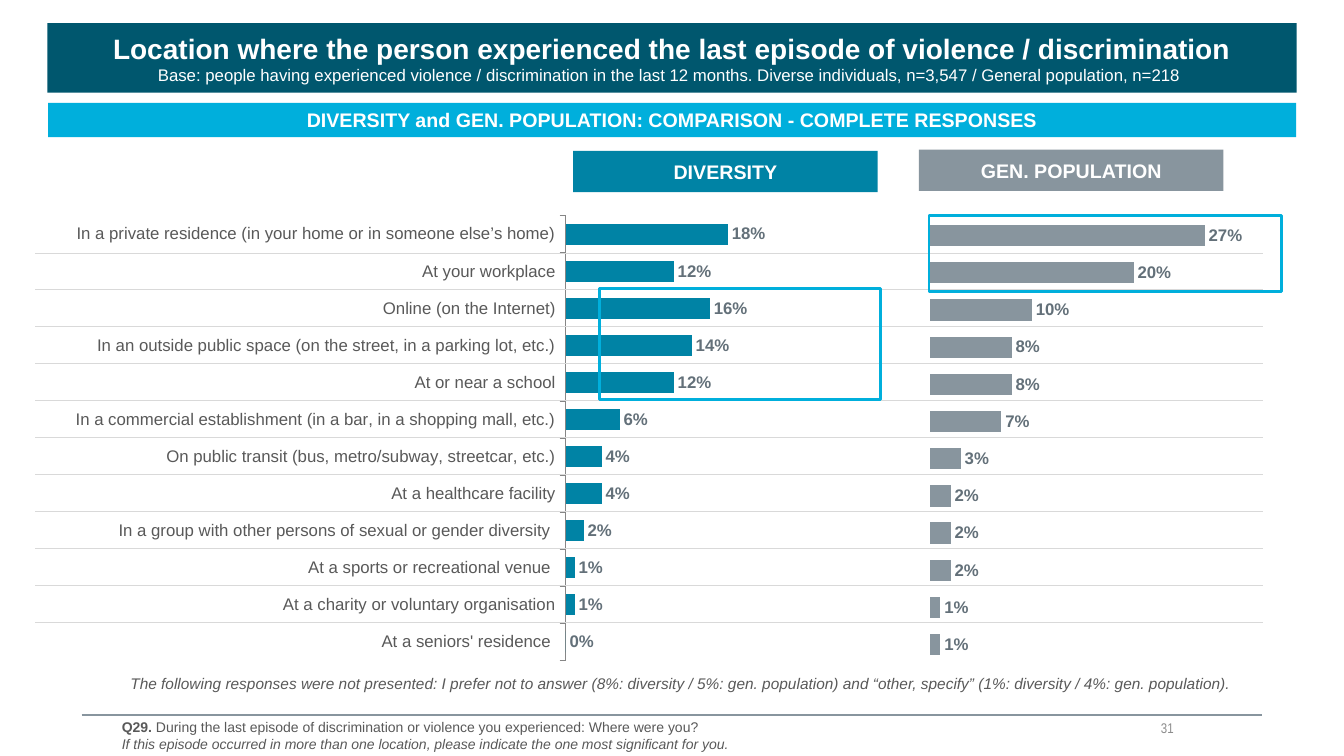
from lxml import etree
from pptx import Presentation
from pptx.chart.data import CategoryChartData
from pptx.dml.color import RGBColor
from pptx.enum.chart import XL_CHART_TYPE, XL_LABEL_POSITION, XL_TICK_LABEL_POSITION, XL_TICK_MARK
from pptx.enum.shapes import MSO_CONNECTOR, MSO_SHAPE
from pptx.enum.text import MSO_ANCHOR, PP_ALIGN
from pptx.oxml import parse_xml
from pptx.oxml.ns import nsdecls, qn
from pptx.util import Inches, Pt

NAVY, TEAL, CYAN, GREY = "00576E", "0083A5", "00AFDC", "88959E"
WHITE, BODY, VALUE, RULE, MUTED = "FFFFFF", "595959", "637079", "D9D9D9", "8C8C8C"

LOCATIONS = [
    ("In a private residence (in your home or in someone else’s home)", 0.18, 0.27),
    ("At your workplace", 0.12, 0.20),
    ("Online (on the Internet)", 0.16, 0.10),
    ("In an outside public space (on the street, in a parking lot, etc.)", 0.14, 0.08),
    ("At or near a school", 0.12, 0.08),
    ("In a commercial establishment (in a bar, in a shopping mall, etc.)", 0.06, 0.07),
    ("On public transit (bus, metro/subway, streetcar, etc.)", 0.04, 0.03),
    ("At a healthcare facility", 0.04, 0.02),
    ("In a group with other persons of sexual or gender diversity ", 0.02, 0.02),
    ("At a sports or recreational venue ", 0.01, 0.02),
    ("At a charity or voluntary organisation", 0.01, 0.01),
    ("At a seniors' residence ", 0, 0.01),
]


def rgb(code):
    return RGBColor.from_string(code)


def style_font(font, size, color, bold=False, italic=False, face="Arial"):
    font.name, font.size, font.bold, font.italic = face, Pt(size), bold, italic
    font.color.rgb = rgb(color)


def write(paragraph, text, align=PP_ALIGN.LEFT, **style):
    paragraph.alignment = align
    run = paragraph.add_run()
    run.text = text
    style_font(run.font, **style)


class SurveySlide:
    """Holds the slide; places are in percent of its width and height."""

    def __init__(self, presentation):
        self.width = presentation.slide_width
        self.height = presentation.slide_height
        self.shapes = presentation.slides.add_slide(presentation.slide_layouts[6]).shapes

    def place(self, left, top, width, height):
        return (round(left * self.width / 100), round(top * self.height / 100),
                round(width * self.width / 100), round(height * self.height / 100))

    def frame(self, shape, anchor, inset):
        frame = shape.text_frame
        frame.word_wrap = True
        frame.vertical_anchor = anchor
        if not inset:
            frame.margin_left = frame.margin_right = frame.margin_top = frame.margin_bottom = 0
        return frame

    def box(self, area, fill=None, outline=None):
        shape = self.shapes.add_shape(MSO_SHAPE.RECTANGLE, *self.place(*area))
        shape.shadow.inherit = False
        if fill:
            shape.fill.solid()
            shape.fill.fore_color.rgb = rgb(fill)
        else:
            shape.fill.background()
        if outline:
            shape.line.color.rgb = rgb(outline)
            shape.line.width = Pt(2)
        else:
            shape.line.fill.background()
        return shape

    def banner(self, area, fill, text, size=14):
        frame = self.frame(self.box(area, fill), MSO_ANCHOR.MIDDLE, inset=False)
        write(frame.paragraphs[0], text, PP_ALIGN.CENTER, size=size, color=WHITE, bold=True)
        return frame

    def text(self, area, anchor=MSO_ANCHOR.TOP, inset=True):
        return self.frame(self.shapes.add_textbox(*self.place(*area)), anchor, inset)

    def rule(self, left, right, y, color, weight):
        x1, y1, x2, _ = self.place(left, y, right, 0)
        line = self.shapes.add_connector(MSO_CONNECTOR.STRAIGHT, x1, y1, x2, y1)
        line.line.color.rgb = rgb(color)
        line.line.width = Pt(weight)
        etree.SubElement(line._element.spPr, qn("a:effectLst"))

    def bars(self, area, plot_area, values, color, show_locations):
        data = CategoryChartData(number_format="0%")
        data.categories = [location for location, *_ in LOCATIONS]
        data.add_series("Series 1", values)
        chart = self.shapes.add_chart(XL_CHART_TYPE.BAR_CLUSTERED, *self.place(*area), data).chart
        chart.has_legend = chart.has_title = False
        style_font(chart.font, 12, BODY)

        shares = chart.value_axis
        shares.minimum_scale, shares.maximum_scale = 0, 0.3
        shares.has_major_gridlines = shares.visible = False
        places = chart.category_axis
        places.reverse_order = True
        places.has_major_gridlines = False
        places.visible = show_locations
        if show_locations:
            places.major_tick_mark = XL_TICK_MARK.OUTSIDE
            places.tick_label_position = XL_TICK_LABEL_POSITION.LOW
            places.format.line.color.rgb = rgb("868686")
            style_font(places.tick_labels.font, 12, BODY)

        plot = chart.plots[0]
        plot.gap_width = 75
        plot.vary_by_categories = False
        fill = plot.series[0].format.fill
        fill.solid()
        fill.fore_color.rgb = rgb(color)
        plot.has_data_labels = True
        labels = plot.data_labels
        labels.show_value = True
        labels.number_format, labels.number_format_is_linked = "0%", False
        labels.position = XL_LABEL_POSITION.OUTSIDE_END
        style_font(labels.font, 12, VALUE, bold=True)
        self.fix_plot(chart, plot_area)

    def fix_plot(self, chart, plot_area):
        """Pin the inner plot area, in percent of the chart."""
        sizes = "".join(f'<c:{key} val="{share / 100}"/>' for key, share in zip("xywh", plot_area))
        layout = parse_xml(
            f'<c:layout {nsdecls("c")}><c:manualLayout><c:layoutTarget val="inner"/>'
            f'<c:xMode val="edge"/><c:yMode val="edge"/>{sizes}</c:manualLayout></c:layout>')
        plot_xml = chart._chartSpace.chart.plotArea
        for automatic in plot_xml.findall(qn("c:layout")):
            plot_xml.remove(automatic)
        plot_xml.insert(0, layout)


def main():
    presentation = Presentation()
    presentation.slide_width, presentation.slide_height = Inches(13.33), Inches(7.5)
    slide = SurveySlide(presentation)
    _, diversity, general = zip(*LOCATIONS)

    slide.rule(6.08, 93.92, 94.53, GREY, 1.5)
    slide.bars((50.38, 28.4, 46.51, 61.2), (40.5, 0.5, 48.8, 96.5),
               general, GREY, show_locations=False)
    page = slide.text((65.49, 94.53, 21.83, 3.47), MSO_ANCHOR.MIDDLE, inset=False)
    write(page.paragraphs[0], "31", PP_ALIGN.RIGHT, size=10, color=MUTED, face="Arial Narrow")

    title = slide.banner(
        (3.53, 3.07, 92.95, 9.2), NAVY,
        "Location where the person experienced the last episode of violence / discrimination", 20)
    write(title.add_paragraph(),
          "Base: people having experienced violence / discrimination in the last 12 months. "
          "Diverse individuals, n=3,547 / General population, n=218 ",
          PP_ALIGN.CENTER, size=12, color=WHITE)
    slide.banner((42.65, 19.97, 22.66, 5.47), TEAL, "DIVERSITY")
    slide.banner((68.38, 19.8, 22.66, 5.47), GREY, "GEN. POPULATION")

    slide.bars((-15.15, 26.13, 81.77, 63.47), (70, 3.8, 24.6, 92.7),
               diversity, TEAL, show_locations=True)
    first_divider, divider_step = 33.47, 4.89
    for gap in range(len(LOCATIONS) - 1):
        slide.rule(2.63, 94, first_divider + gap * divider_step, RULE, 0.75)

    question = slide.text((8.33, 94.4, 81.4, 5.87))
    wording = question.paragraphs[0]
    write(wording, "Q29. ", size=10, color=BODY, bold=True)
    write(wording, "During the last episode of discrimination or violence you experienced: "
          "Where were you?", size=10, color=BODY)
    write(question.add_paragraph(), "If this episode occurred in more than one location, "
          "please indicate the one most significant for you.", size=10, color=BODY, italic=True)
    omitted = slide.text((2.9, 88.53, 95.57, 3.87))
    write(omitted.paragraphs[0],
          "The following responses were not presented: I prefer not to answer "
          "(8%: diversity / 5%: gen. population) and “other, specify” "
          "(1%: diversity / 4%: gen. population).",
          PP_ALIGN.CENTER, size=11, color=BODY, italic=True)

    for highlight in ((69.12, 28.53, 26.26, 10), (44.6, 38.13, 20.93, 14.67)):
        slide.box(highlight, outline=CYAN)
    slide.banner((3.58, 13.6, 92.87, 4.53), CYAN,
                 "DIVERSITY and GEN. POPULATION: COMPARISON - COMPLETE RESPONSES")
    presentation.save("out.pptx")


if __name__ == "__main__":
    main()
